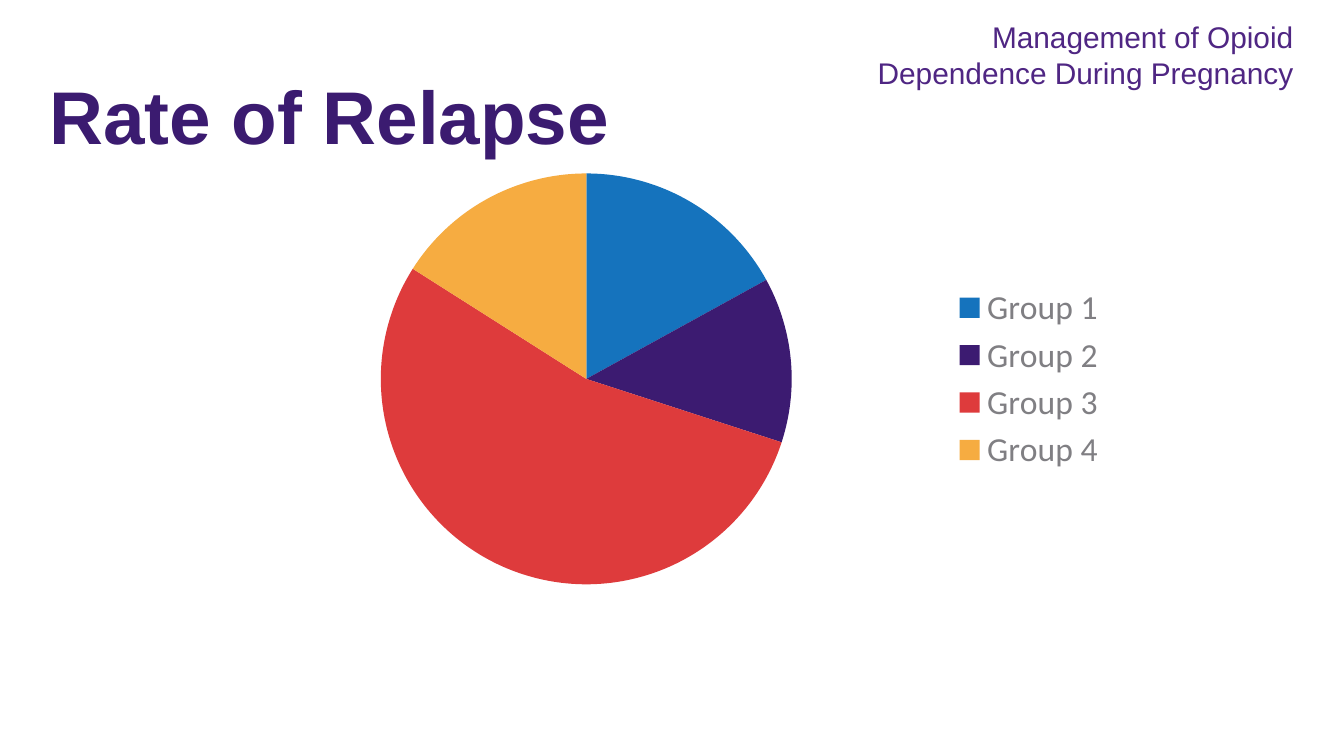
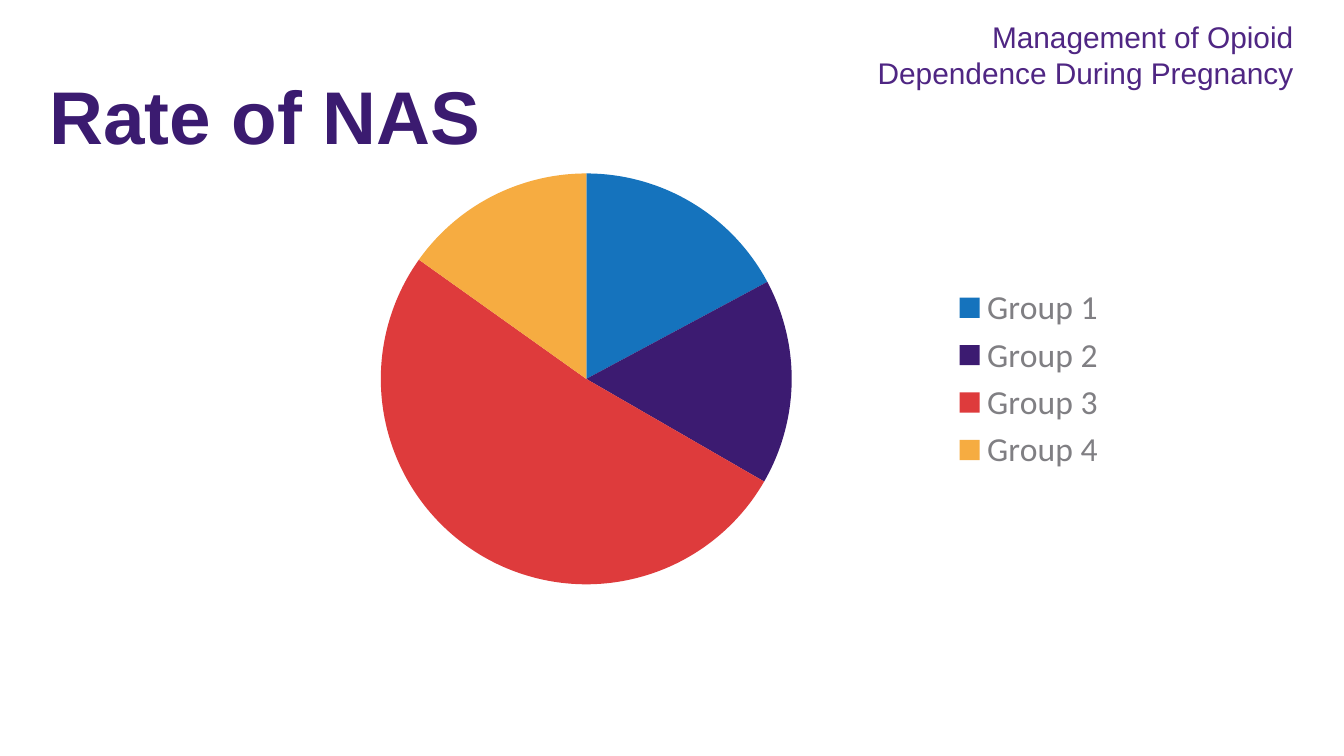
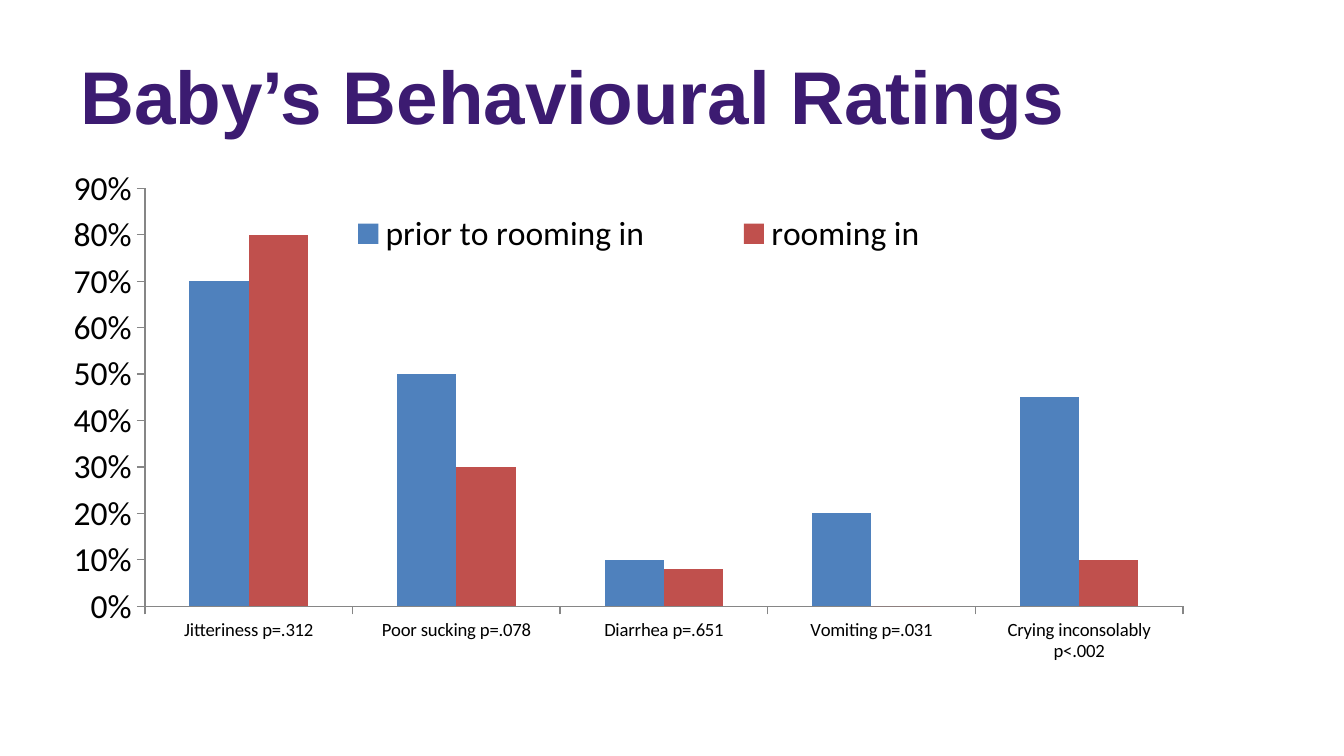
from lxml.etree import SubElement
from pptx import Presentation
from pptx.chart.data import CategoryChartData as ChartData
from pptx.dml.color import RGBColor
from pptx.enum.chart import XL_CHART_TYPE as ChartKind, XL_LEGEND_POSITION as LegendSide
from pptx.enum.chart import XL_TICK_MARK as Tick
from pptx.enum.text import MSO_ANCHOR as Anchor, MSO_AUTO_SIZE as AutoSize, PP_ALIGN as Align
from pptx.oxml.ns import qn
from pptx.util import Pt


def rgb(code):
    return RGBColor.from_string(code)


def apply(target, values):
    for name, value in values.items():
        setattr(target, name, value)


class Deck:
    """Style of the deck and the slide being filled."""

    heading = {"name": "Arial", "size": Pt(40), "bold": True}
    running_head = {"name": "Arial", "size": Pt(16), "bold": False}
    chart_font = {"name": "Calibri", "size": Pt(18)}
    slice_colours = ["1573BD", "3C1B71", "DE3B3C", "F6AC41"]
    bar_colours = ["4F81BD", "C0504D"]

    def __init__(self):
        self.deck = Presentation()
        apply(self.deck, {"slide_width": Pt(720), "slide_height": Pt(405)})
        self.slide = None

    def add_slide(self):
        self.slide = self.deck.slides.add_slide(self.deck.slide_layouts[6])

    def text(self, wording, place, font, colour, frame=None, layout=None):
        words = self.slide.shapes.add_textbox(*map(Pt, place)).text_frame
        apply(words, {"word_wrap": True, **(frame or {})})
        line = words.paragraphs[0]
        line.text = wording
        apply(line, layout or {})
        apply(line.runs[0].font, font)
        line.runs[0].font.color.rgb = rgb(colour)

    def chart(self, kind, place, categories, series, number_format="General"):
        data = ChartData(number_format=number_format)
        data.categories = categories
        for name, values in series.items():
            data.add_series(name, values)
        chart = self.slide.shapes.add_chart(kind, *map(Pt, place), data).chart
        apply(chart, {"has_title": False, "has_legend": True})
        apply(chart.font, self.chart_font)
        chart.font.color.rgb = rgb("000000")
        apply(chart.legend, {"position": LegendSide.RIGHT, "include_in_layout": False})
        return chart

    def pie(self, place, categories, values):
        chart = self.chart(ChartKind.PIE, place, categories, {"Series 1": values})
        apply(chart.legend.font, self.chart_font)
        chart.legend.font.color.rgb = rgb("807F83")
        plot = chart.plots[0]
        plot.vary_by_categories = True
        for index, colour in enumerate(self.slice_colours):
            fill = plot.series[0].points[index].format.fill
            fill.solid()
            fill.fore_color.rgb = rgb(colour)

    def columns(self, place, categories, series, plot_box, legend_box):
        chart = self.chart(ChartKind.COLUMN_CLUSTERED, place, categories, series, "0%")
        plot = chart.plots[0]
        apply(plot, {"gap_width": 150, "overlap": 0, "vary_by_categories": False})
        for bars, colour in zip(plot.series, self.bar_colours):
            bars.format.fill.solid()
            bars.format.fill.fore_color.rgb = rgb(colour)
        for axis, size in ((chart.category_axis, 10), (chart.value_axis, 18)):
            apply(axis, {"has_major_gridlines": False, "major_tick_mark": Tick.OUTSIDE,
                         "minor_tick_mark": Tick.NONE})
            apply(axis.tick_labels.font, {**self.chart_font, "size": Pt(size)})
            axis.format.line.color.rgb = rgb("868686")
            axis.format.line.width = Pt(0.75)
        apply(chart.value_axis, {"minimum_scale": 0, "maximum_scale": 0.9, "major_unit": 0.1})
        apply(chart.value_axis.tick_labels,
              {"number_format": "0%", "number_format_is_linked": False})
        legend = chart.legend._element
        self.arrange(legend.getparent().find(qn("c:plotArea")), 0, plot_box, "inner")
        self.arrange(legend, 1, legend_box)

    def arrange(self, part, position, box, target=None):
        for old in part.findall(qn("c:layout")):
            part.remove(old)
        layout = SubElement(part, qn("c:layout"))
        part.insert(position, layout)
        manual = SubElement(layout, qn("c:manualLayout"))
        settings = [("layoutTarget", target)] if target else []
        settings += [("xMode", "edge"), ("yMode", "edge"), *zip("xywh", box)]
        for tag, value in settings:
            SubElement(manual, qn(f"c:{tag}")).set("val", str(value))

    def rate_slide(self, title, rates):
        self.add_slide()
        grow = {"auto_size": AutoSize.SHAPE_TO_FIT_TEXT}
        self.text(title, (19.5, 34, 631, 163), self.heading, "3B1B70", grow)
        groups = [f"Group {number}" for number in range(1, len(rates) + 1)]
        self.pie((120, 83, 480, 240), groups, rates)
        self.text("Management of Opioid Dependence During Pregnancy", (448.5, 6.5, 251.5, 65.5),
                  self.running_head, "4F2683", grow, {"alignment": Align.RIGHT})

    def ratings_slide(self, title, ratings):
        self.add_slide()
        self.text(title, (36, 16.5, 648, 68), self.heading, "3C1B71",
                  {"vertical_anchor": Anchor.MIDDLE}, {"space_after": Pt(12)})
        before, after = zip(*ratings.values())
        self.columns((24, 90, 670, 270), list(ratings),
                     {"prior to rooming in": before, "rooming in": after},
                     (0.08, 0.04, 0.83, 0.83), (0.18, 0.08, 0.59, 0.1))


def main():
    talk = Deck()
    talk.rate_slide("Rate of Relapse", [17, 13, 54, 16])
    talk.rate_slide("Rate of NAS", [17, 16, 51, 15])
    talk.ratings_slide("Baby’s Behavioural Ratings", {
        "Jitteriness p=.312": (0.7, 0.8),
        "Poor sucking p=.078": (0.5, 0.3),
        "Diarrhea p=.651": (0.1, 0.08),
        "Vomiting p=.031": (0.2, 0),
        "Crying inconsolably p<.002": (0.45, 0.1),
    })
    talk.deck.save("out.pptx")


if __name__ == "__main__":
    main()
